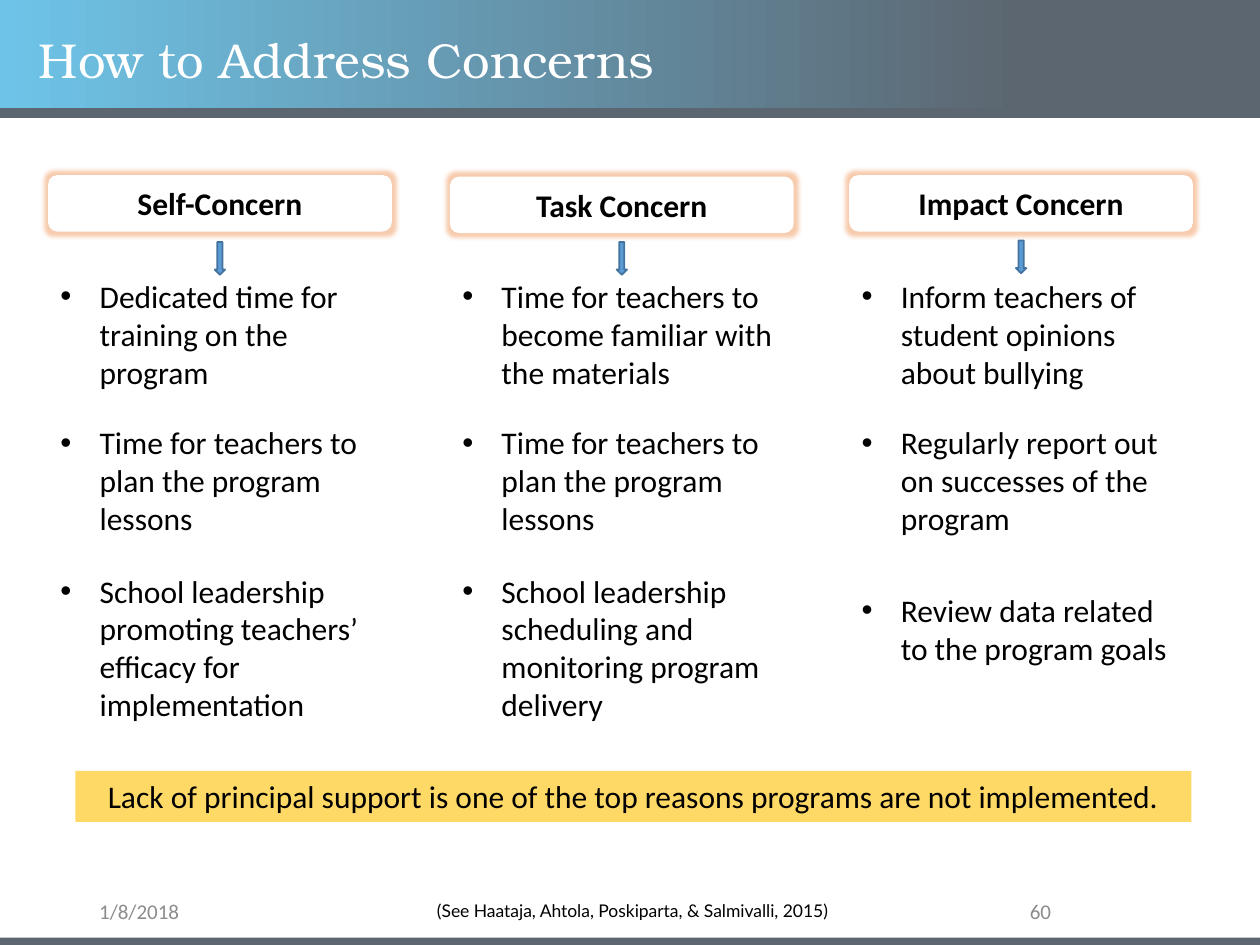
from lxml import etree
from pptx import Presentation
from pptx.dml.color import RGBColor
from pptx.enum.shapes import MSO_SHAPE
from pptx.enum.text import MSO_ANCHOR, MSO_AUTO_SIZE, PP_ALIGN
from pptx.oxml.ns import qn
from pptx.util import Cm, Pt

RECT, ROUNDED, DOWN = MSO_SHAPE.RECTANGLE, MSO_SHAPE.ROUNDED_RECTANGLE, MSO_SHAPE.DOWN_ARROW
TOP, MIDDLE = MSO_ANCHOR.TOP, MSO_ANCHOR.MIDDLE
LEFT, CENTER, RIGHT = PP_ALIGN.LEFT, PP_ALIGN.CENTER, PP_ALIGN.RIGHT
NO_FIT = MSO_AUTO_SIZE.NONE

THEME = {
    "heading": "TeX Gyre Bonum", "body": "Calibri", "source": "Lato",
    "heading_size": 28, "body_size": 18, "footer_size": 12, "source_size": 10,
    "sky": "6EC4E8", "slate": "5C6670", "white": "FFFFFF", "black": "000000",
    "gray": "8C8C8C", "gold": "FFD966", "arrow": "5B9BD5", "arrow_edge": "43739E",
    "glow": "ED7D31",
}

TITLE = "How to Address Concerns"
CONCERNS = [
    {"name": "Self-Concern", "left": 0.97, "top": 3.53, "arrow_top": 4.88, "actions": [
        (5.46, 3, "Dedicated time for training on the program"),
        (8.41, 3, "Time for teachers to plan the program lessons"),
        (11.4, 4, "School leadership promoting teachers’ efficacy for implementation")]},
    {"name": "Task Concern", "left": 9.07, "top": 3.56, "arrow_top": 4.88, "actions": [
        (5.46, 3, "Time for teachers to become familiar with the materials"),
        (8.41, 3, "Time for teachers to plan the program lessons"),
        (11.4, 4, "School leadership scheduling and monitoring program delivery")]},
    {"name": "Impact Concern", "left": 17.12, "top": 3.53, "arrow_top": 4.85, "actions": [
        (5.46, 3, "Inform teachers of student opinions about bullying"),
        (8.41, 3, "Regularly report out on successes of the program"),
        (11.79, 2, "Review data related to the program goals")]},
]
TAKEAWAY = "Lack of principal support is one of the top reasons programs are not implemented."
CITATION = "(See Haataja, Ahtola, Poskiparta, & Salmivalli, 2015)"
DATE, PAGE = "1/8/2018", "60"

SLIDE_W, SLIDE_H = 25.4, 19.05
COLUMN_W, HEADER_H = 6.93, 1.14
ARROW_W, ARROW_H = 0.21, 0.66
LINE_H, TEXT_PAD = 0.77, 0.25
BULLET_INDENT = 0.79


def color(name):
    return RGBColor.from_string(THEME[name])


def write(holder, words, font="body", size="body_size", ink="black",
          align=LEFT, anchor=TOP, bold=False, bullet=False):
    frame = holder.text_frame
    frame.word_wrap = True
    frame.auto_size = NO_FIT
    frame.vertical_anchor = anchor
    paragraph = frame.paragraphs[0]
    paragraph.alignment = align
    if bullet:
        props = paragraph._p.get_or_add_pPr()
        props.set("marL", str(Cm(BULLET_INDENT)))
        props.set("indent", str(-Cm(BULLET_INDENT)))
        etree.SubElement(props, qn("a:buFont")).set("typeface", "Arial")
        etree.SubElement(props, qn("a:buChar")).set("char", "•")
    run = paragraph.add_run()
    run.text = words
    run.font.name = THEME[font]
    run.font.size = Pt(THEME[size])
    run.font.bold = bold
    run.font.color.rgb = color(ink)
    return paragraph


def add_block(slide, preset, box, fill, edge=None):
    block = slide.shapes.add_shape(preset, *map(Cm, box))
    block.shadow.inherit = False
    block.fill.solid()
    block.fill.fore_color.rgb = color(fill)
    if edge:
        block.line.color.rgb = color(edge)
        block.line.width = Pt(1)
    else:
        block.line.fill.background()
    return block


def add_text(slide, box, words, **style):
    write(slide.shapes.add_textbox(*map(Cm, box)), words, **style)


def add_glow(block):
    effects = block._element.spPr.find(qn("a:effectLst"))
    glow = etree.SubElement(effects, qn("a:glow"), rad=str(Pt(5)))
    tint = etree.SubElement(glow, qn("a:srgbClr"), val=THEME["glow"])
    etree.SubElement(tint, qn("a:alpha"), val="40000")


def add_frame(slide):
    banner = add_block(slide, RECT, (0, 0, SLIDE_W, 2.21), "slate")
    banner.fill.gradient()
    banner.fill.gradient_angle = 0
    for stop, (position, name) in zip(banner.fill.gradient_stops, [(0, "sky"), (0.81, "slate")]):
        stop.position = position
        stop.color.rgb = color(name)
    for top, height in [(2.18, 0.2), (18.9, SLIDE_H - 18.9)]:
        add_block(slide, RECT, (0, top, SLIDE_W, height), "slate")

    footer = {"size": "footer_size", "ink": "gray", "anchor": MIDDLE}
    add_text(slide, (1.75, 18.08, 5.72, 0.58), DATE, **footer)
    add_text(slide, (17.93, 18.08, 3.51, 0.58), PAGE, align=RIGHT, **footer)


def add_title(slide):
    title = slide.shapes.title
    title.left, title.top, title.width, title.height = map(Cm, (0.53, 0.53, 21.89, 1.45))
    heading = write(title, TITLE, font="heading", size="heading_size", ink="white", anchor=MIDDLE)
    heading.line_spacing = 0.9
    slide.shapes._spTree.append(title._element)


def add_concern(slide, concern):
    left = concern["left"]
    header = add_block(slide, ROUNDED, (left, concern["top"], COLUMN_W, HEADER_H), "white")
    add_glow(header)
    write(header, concern["name"], align=CENTER, anchor=MIDDLE, bold=True)
    arrow_left = left + (COLUMN_W - ARROW_W) / 2
    add_block(slide, DOWN, (arrow_left, concern["arrow_top"], ARROW_W, ARROW_H),
              "arrow", "arrow_edge")
    for top, lines, action in concern["actions"]:
        add_text(slide, (left, top, COLUMN_W, TEXT_PAD + lines * LINE_H), action, bullet=True)


def main():
    deck = Presentation()
    deck.slide_width, deck.slide_height = Cm(SLIDE_W), Cm(SLIDE_H)
    slide = deck.slides.add_slide(deck.slide_layouts[5])
    add_frame(slide)
    add_title(slide)
    for concern in CONCERNS:
        add_concern(slide, concern)
    takeaway = add_block(slide, RECT, (1.52, 15.54, 22.5, 1.03), "gold")
    write(takeaway, TAKEAWAY, align=CENTER, anchor=MIDDLE)
    add_text(slide, (0.76, 18.01, 23.98, 0.68), CITATION,
             font="source", size="source_size", align=CENTER)
    deck.save("out.pptx")


if __name__ == "__main__":
    main()
